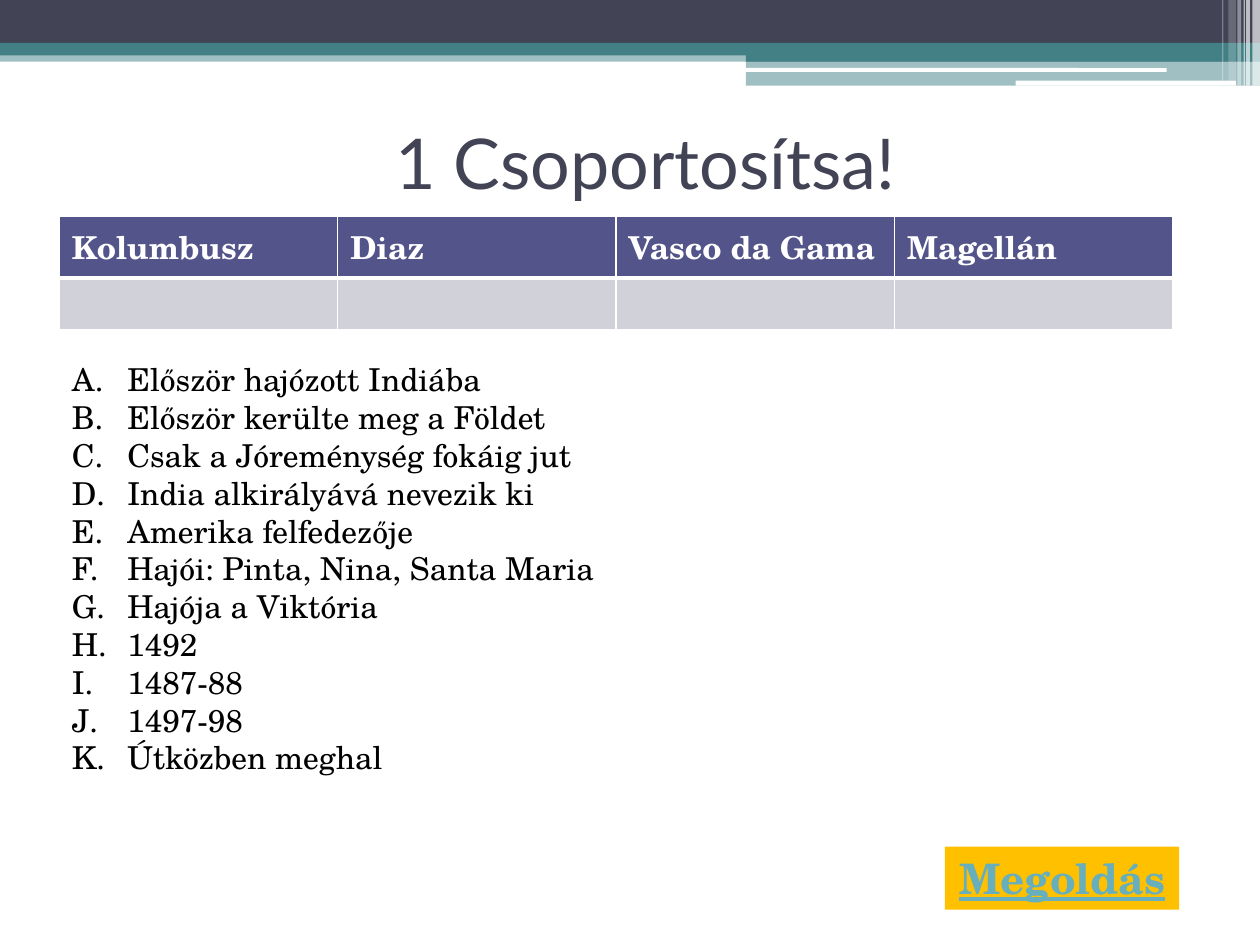
"""Build a quiz slide that sorts facts under four explorers."""
from dataclasses import dataclass

from lxml.etree import SubElement
from pptx import Presentation
from pptx.dml.color import RGBColor as RGB
from pptx.enum.shapes import MSO_SHAPE as SHAPE
from pptx.enum.text import MSO_ANCHOR as ANCHOR, MSO_AUTO_SIZE as AUTO, PP_ALIGN as ALIGN
from pptx.oxml.ns import qn
from pptx.util import Inches, Pt

TITLE = "1 Csoportosítsa!"
EXPLORERS = ["Kolumbusz", "Diaz", "Vasco da Gama", "Magellán"]
FACTS = [
    "Először hajózott Indiába",
    "Először kerülte meg a Földet",
    "Csak a Jóreménység fokáig jut",
    "India alkirályává nevezik ki",
    "Amerika felfedezője",
    "Hajói: Pinta, Nina, Santa Maria",
    "Hajója a Viktória",
    "1492",
    "1487-88",
    "1497-98",
    "Útközben meghal",
]
BUTTON = "Megoldás"


@dataclass(frozen=True)
class Theme:
    dark: str = "424456"
    teal: str = "438086"
    white: str = "FFFFFF"
    black: str = "000000"
    header: str = "53548A"
    cell: str = "D1D1DA"
    gold: str = "FFC000"
    link: str = "67AFBD"
    head_font: str = "Lato"
    body_font: str = "TeX Gyre Schola"
    title: int = 40
    body: int = 18
    button: int = 24


T = Theme()
W, H = 10, 7.5
LEFT, SPLIT = 0.47, 5.92
COL, ROW = 2.21, 0.41
BANDS = [
    (0, 0.4, W, 0.09, T.teal, 50),
    (0, 0, W, 0.34, T.dark, 100),
    (0, 0.34, W, 0.1, T.teal, 100),
    (SPLIT, 0.39, W - SPLIT, 0.1, T.teal, 100),
    (SPLIT, 0.48, W - SPLIT, 0.2, T.teal, 50),
]
RULES = [(5.91, 0.54, 3.35, 0.03), (8.06, 0.64, 1.75, 0.04)]
STRIPES = [
    (9.94, 0.06, 0.68, 65),
    (9.89, 0.03, 0.68, 65),
    (9.87, 0.01, 0.68, 60),
    (9.82, 0.03, 0.68, 40),
    (9.75, 0.06, 0.64, 20),
    (9.7, 0.01, 0.64, 30),
]


def put(sp, *box):
    for name, value in zip(("left", "top", "width", "height"), box):
        setattr(sp, name, Inches(value))


def write(p, text, color, **fmt):
    r = p.add_run()
    r.text = text
    for name, value in fmt.items():
        setattr(r.font, name, value)
    r.font.color.rgb = RGB.from_string(color)


def bar(slide, x, y, w, h, color, alpha=100, kind=SHAPE.RECTANGLE):
    sp = slide.shapes.add_shape(kind, *map(Inches, (x, y, w, h)))
    sp.shadow.inherit = False
    sp.line.fill.background()
    sp.fill.solid()
    sp.fill.fore_color.rgb = RGB.from_string(color)
    if alpha < 100:
        clr = sp.fill._xPr.find(".//" + qn("a:srgbClr"))
        SubElement(clr, qn("a:alpha"), val=str(alpha * 1000))
    return sp


def border(cell, bottom):
    tc = cell._tc.get_or_add_tcPr()
    widths = {"a:lnL": 1, "a:lnR": 1, "a:lnT": 1, "a:lnB": bottom}
    for i, (tag, width) in enumerate(widths.items()):
        ln = SubElement(tc, qn(tag), w=str(Pt(width)))
        SubElement(SubElement(ln, qn("a:solidFill")), qn("a:srgbClr"), val=T.white)
        tc.insert(i, ln)


def decorate(slide):
    for band in BANDS:
        bar(slide, *band)
    for rule in RULES:
        bar(slide, *rule, T.white, kind=SHAPE.ROUNDED_RECTANGLE)
    for x, w, h, alpha in STRIPES:
        bar(slide, x, 0, w, h, T.white, alpha)


def add_title(slide):
    sp = slide.shapes.title
    put(sp, 0.62, 0.7, 9, 1.17)
    tf = sp.text_frame
    tf.vertical_anchor = ANCHOR.MIDDLE
    p = tf.paragraphs[0]
    p.alignment = ALIGN.CENTER
    write(p, TITLE, T.dark, size=Pt(T.title), name=T.head_font)


def add_grid(slide):
    n = len(EXPLORERS)
    box = map(Inches, (LEFT, 1.72, n * COL, 2 * ROW))
    table = slide.shapes.add_table(2, n, *box).table
    for c, name in enumerate(EXPLORERS):
        for r, (color, bottom) in enumerate([(T.header, 3), (T.cell, 1)]):
            cell = table.cell(r, c)
            cell.fill.solid()
            cell.fill.fore_color.rgb = RGB.from_string(color)
            border(cell, bottom)
        write(table.cell(0, c).text_frame.paragraphs[0], name, T.white,
              size=Pt(T.body), name=T.body_font, bold=True)


def add_facts(slide):
    sp = slide.placeholders[1]
    put(sp, LEFT, 2.81, 7.89, 3.43)
    tf = sp.text_frame
    tf.auto_size = AUTO.NONE
    indent = Inches(0.44)
    for i, fact in enumerate(FACTS):
        p = tf.add_paragraph() if i else tf.paragraphs[0]
        p.space_before = Pt(0)
        pPr = p._p.get_or_add_pPr()
        pPr.set("marL", str(indent))
        pPr.set("indent", str(-indent))
        SubElement(pPr, qn("a:buFont"), typeface=T.body_font)
        SubElement(pPr, qn("a:buAutoNum"), type="alphaUcPeriod")
        write(p, fact, T.black, size=Pt(T.body), name=T.body_font)


def add_button(slide):
    sp = bar(slide, 7.5, 6.72, 1.86, 0.5, T.gold)
    tf = sp.text_frame
    tf.word_wrap = False
    p = tf.paragraphs[0]
    p.alignment = ALIGN.CENTER
    write(p, BUTTON, T.link, size=Pt(T.button), name=T.body_font,
          bold=True, underline=True)


def main():
    prs = Presentation()
    prs.slide_width, prs.slide_height = Inches(W), Inches(H)
    slide = prs.slides.add_slide(prs.slide_layouts[1])
    for draw in (decorate, add_title, add_button, add_grid, add_facts):
        draw(slide)
    prs.save("out.pptx")


if __name__ == "__main__":
    main()
